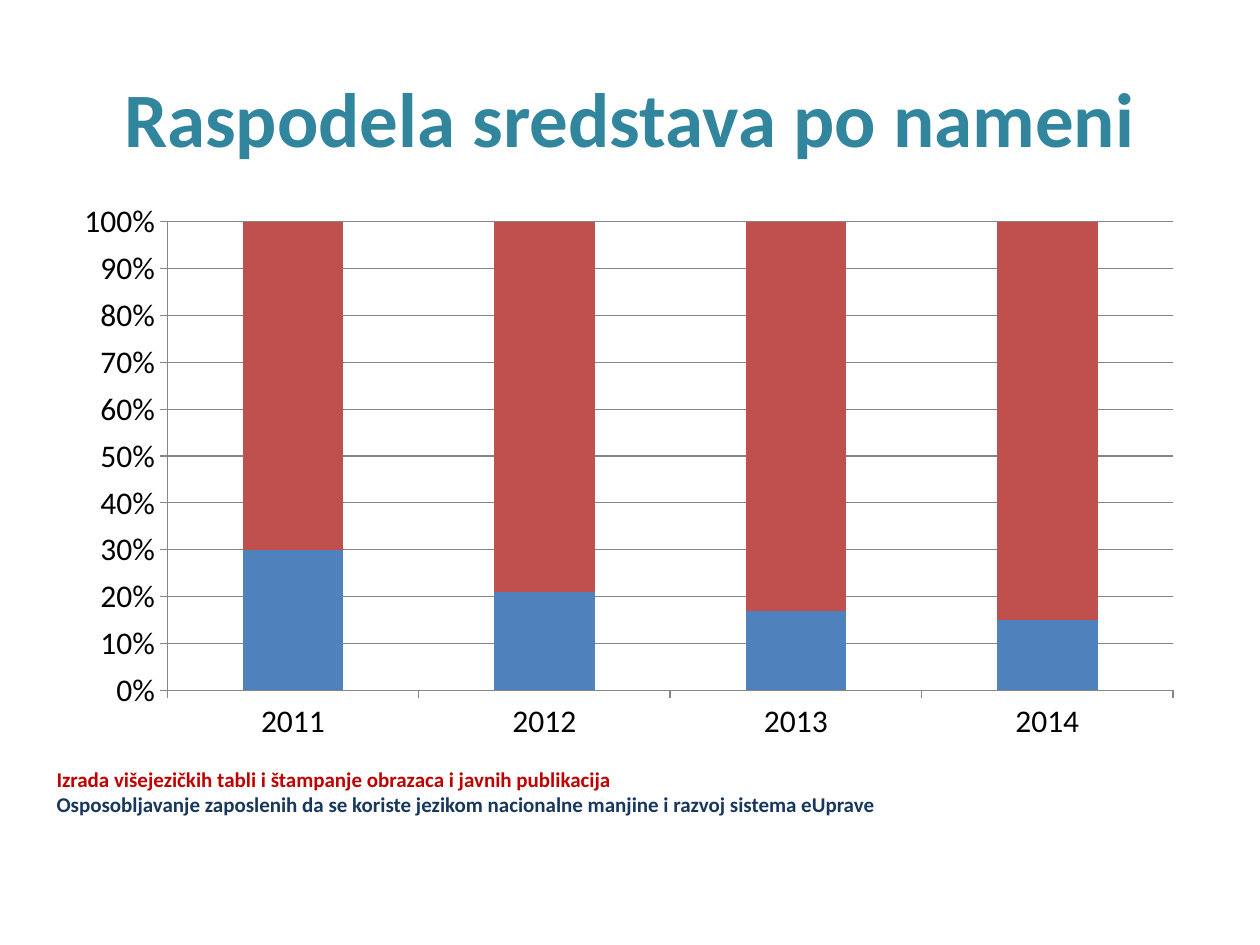
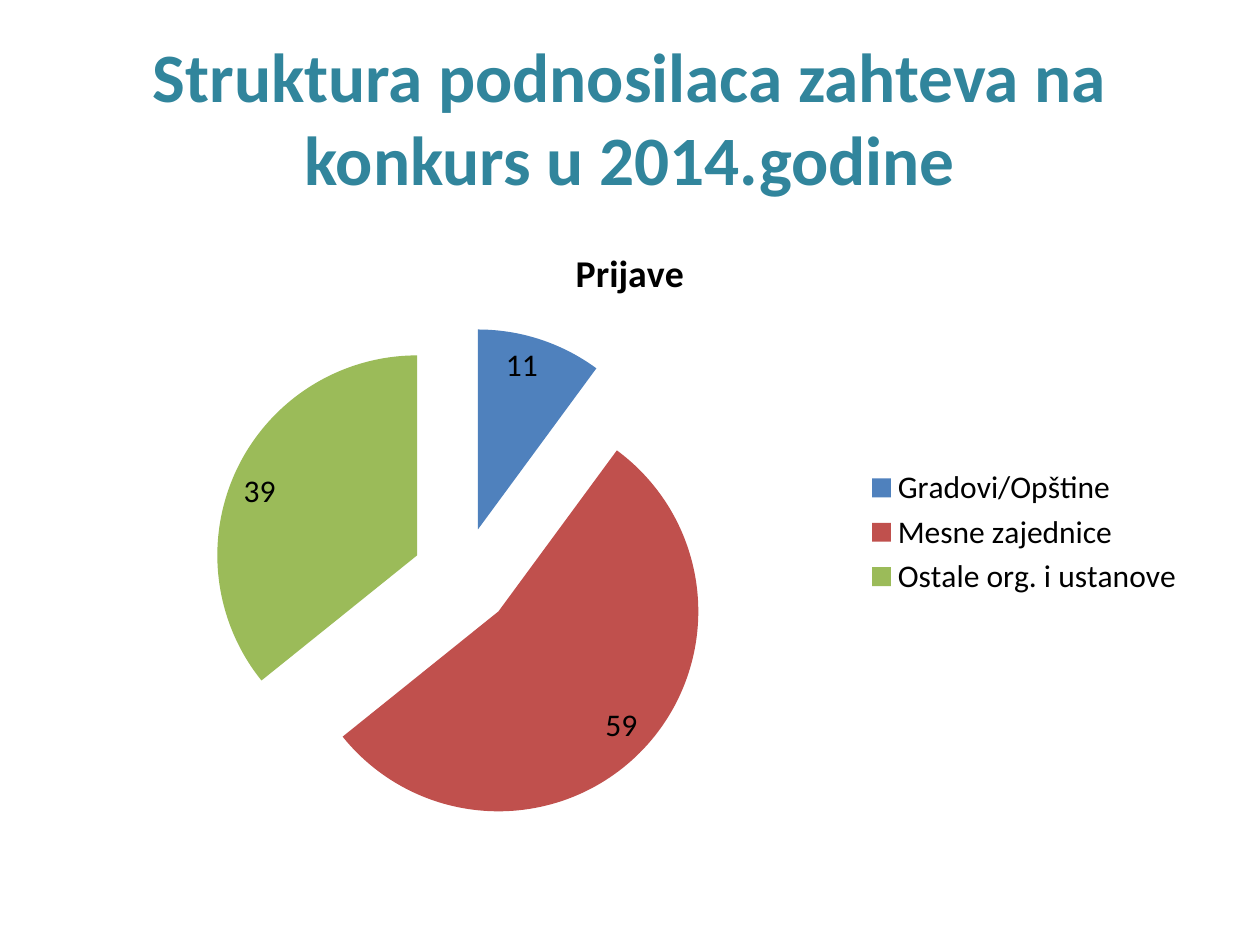
from lxml import etree
from pptx import Presentation
from pptx.chart.data import CategoryChartData
from pptx.dml.color import RGBColor
from pptx.enum.chart import XL_CHART_TYPE, XL_LABEL_POSITION, XL_LEGEND_POSITION, XL_TICK_MARK
from pptx.enum.text import MSO_ANCHOR, PP_ALIGN
from pptx.oxml.ns import qn
from pptx.util import Pt

STACKED = XL_CHART_TYPE.COLUMN_STACKED_100
PIE = XL_CHART_TYPE.PIE
OUTSIDE = XL_TICK_MARK.OUTSIDE
RIGHT = XL_LEGEND_POSITION.RIGHT
INSIDE_END = XL_LABEL_POSITION.INSIDE_END
CENTER = PP_ALIGN.CENTER
MIDDLE = MSO_ANCHOR.MIDDLE

TEAL = RGBColor(0x31, 0x85, 0x9C)
BLACK = RGBColor(0, 0, 0)
GRAY = RGBColor(0x86, 0x86, 0x86)
BLUE = RGBColor(0x4F, 0x81, 0xBD)
RED = RGBColor(0xC0, 0x50, 0x4D)
GREEN = RGBColor(0x9B, 0xBB, 0x59)
DARK_RED = RGBColor(0xC0, 0, 0)
NAVY = RGBColor(0x17, 0x37, 0x5E)
EXPLOSION = "25"


def style_font(font, size, color, bold=False):
    settings = {"name": "Calibri", "size": Pt(size), "bold": bold}
    for name, value in settings.items():
        setattr(font, name, value)
    font.color.rgb = color


def add_chart_page(title, title_size, chart_type, place, categories, series):
    page = deck.slides.add_slide(deck.slide_layouts[5])
    heading = page.shapes.title
    frame_place = {"left": 36, "top": 21.6, "width": 648, "height": 90}
    for name, value in frame_place.items():
        setattr(heading, name, Pt(value))
    heading.text_frame.vertical_anchor = MIDDLE
    heading.text_frame.text = title
    para = heading.text_frame.paragraphs[0]
    para.alignment = CENTER
    style_font(para.runs[0].font, title_size, TEAL, True)
    data = CategoryChartData()
    data.categories = categories
    for name, values in series:
        data.add_series(name, values)
    lengths = [Pt(value) for value in place]
    chart = page.shapes.add_chart(chart_type, *lengths, data).chart
    style_font(chart.font, 18, BLACK)
    return page, chart


deck = Presentation()
deck.slide_width, deck.slide_height = Pt(720), Pt(540)

page, chart = add_chart_page(
    "Raspodela sredstava po nameni", 44, STACKED, (35.3, 109.4, 648, 320.4),
    ["2011", "2012", "2013", "2014"],
    [("Series 1", (30, 21, 17, 15)), ("Series 2", (70, 79, 83, 85))])
chart.has_title = False
chart.has_legend = False
plot = chart.plots[0]
plot.gap_width, plot.overlap = 150, 100
for series, color in zip(plot.series, (BLUE, RED)):
    series.format.fill.solid()
    series.format.fill.fore_color.rgb = color
for axis in (chart.category_axis, chart.value_axis):
    axis.major_tick_mark = OUTSIDE
    axis.format.line.color.rgb = GRAY
shares = chart.value_axis
shares.has_major_gridlines = True
shares.major_gridlines.format.line.color.rgb = GRAY
shares.tick_labels.number_format = "0%"
shares.tick_labels.number_format_is_linked = False

box = page.shapes.add_textbox(Pt(25.2), Pt(434.2), Pt(646.6), Pt(36))
box.text_frame.word_wrap = True
legend_lines = [
    ("Izrada višejezičkih tabli i štampanje obrazaca i javnih publikacija", DARK_RED),
    ("Osposobljavanje zaposlenih da se koriste jezikom nacionalne manjine i razvoj sistema eUprave", NAVY),
]
box.text_frame.text = "\n".join(text for text, color in legend_lines)
for para, (text, color) in zip(box.text_frame.paragraphs, legend_lines):
    style_font(para.runs[0].font, 12, color, True)

page, chart = add_chart_page(
    "Struktura podnosilaca zahteva na konkurs u 2014.godine", 39.6, PIE, (36, 126, 648, 356.4),
    ["Gradovi/Opštine", "Mesne zajednice", "Ostale org. i ustanove"],
    [("Prijave", (11, 59, 39))])
chart.has_title = True
chart.chart_title.text_frame.text = "Prijave"
style_font(chart.chart_title.text_frame.paragraphs[0].runs[0].font, 21.6, BLACK, True)
chart.has_legend = True
chart.legend.position = RIGHT
chart.legend.include_in_layout = False
style_font(chart.legend.font, 18, BLACK)
plot = chart.plots[0]
plot.vary_by_categories = True
applications = plot.series[0]
for index, color in enumerate((BLUE, RED, GREEN)):
    fill = applications.points[index].format.fill
    fill.solid()
    fill.fore_color.rgb = color
for properties in applications._element.findall(qn("c:dPt") + "/" + qn("c:spPr")):
    explosion = etree.Element(qn("c:explosion"), val=EXPLOSION)
    properties.addprevious(explosion)
explosion = etree.Element(qn("c:explosion"), val=EXPLOSION)
applications._element.find(qn("c:tx")).addnext(explosion)
labels = applications.data_labels
labels.show_value = True
labels.position = INSIDE_END
style_font(labels.font, 18, BLACK)

deck.save("out.pptx")
